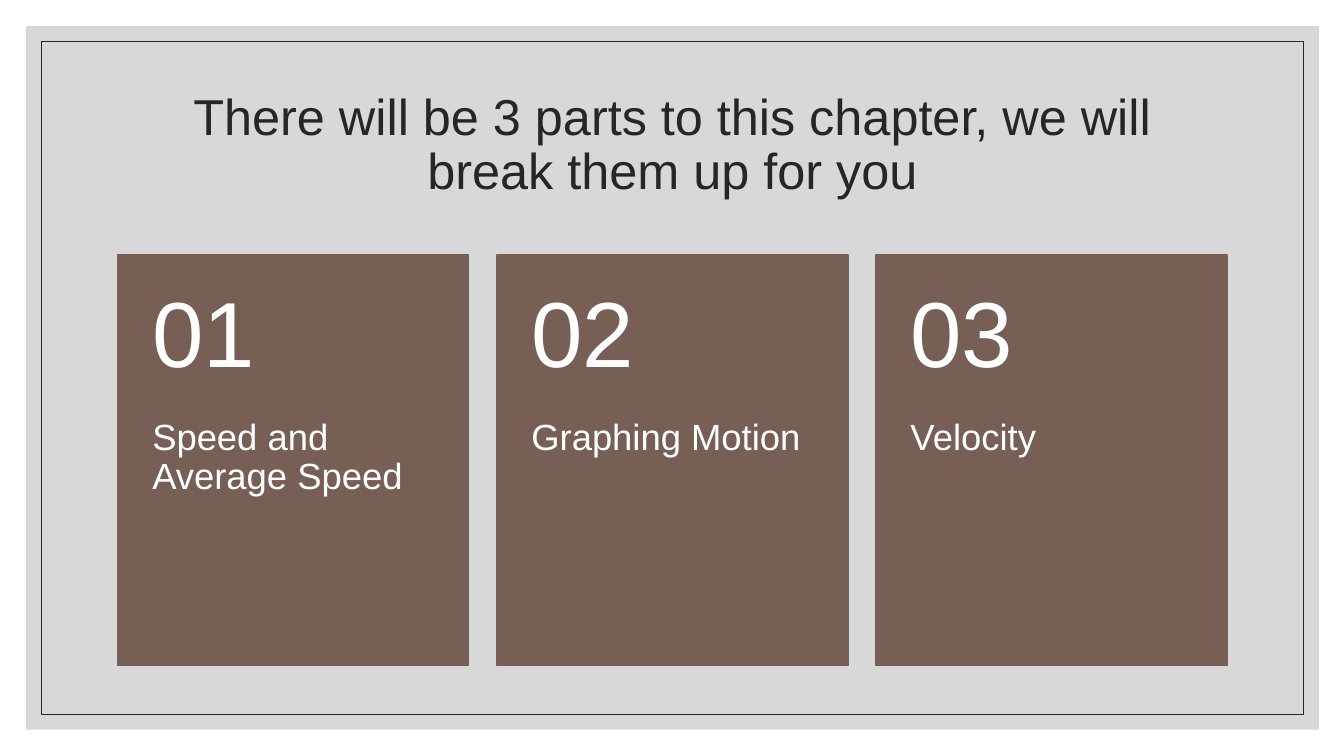
"""Build the chapter overview slide with three numbered parts."""
import pptx
import pptx.util
import pptx.dml.color
import pptx.enum.shapes
import pptx.enum.text
import pptx.oxml
import pptx.oxml.ns
from pptx.util import Inches

COLORS = {"backdrop": "BFBFBF", "ink": "262626", "card": "775F55", "card_text": "FFFFFF"}
PARTS = ["Speed and Average Speed", "Graphing Motion", "Velocity"]
CARD_LEFT, CARD_TOP, CARD_WIDTH, CARD_HEIGHT = 1.17, 2.53, 3.48, 4.07
CARD_STEP = 3.76
NUMBER_HEIGHT = 1.63


def add_panel(left, top, width, height):
    panel = slide.shapes.add_shape(
        pptx.enum.shapes.MSO_SHAPE.RECTANGLE,
        Inches(left), Inches(top), Inches(width), Inches(height))
    panel.shadow.inherit = False
    return panel


def write_text(frame, text, size, color, align, anchor):
    frame.text = text
    frame.word_wrap = True
    frame.auto_size = pptx.enum.text.MSO_AUTO_SIZE.NONE
    frame.vertical_anchor = anchor
    paragraph = frame.paragraphs[0]
    paragraph.alignment = align
    paragraph.line_spacing = 0.9
    font = paragraph.runs[0].font
    font.name = "Arial"
    font.size = pptx.util.Pt(size)
    font.color.rgb = pptx.dml.color.RGBColor.from_string(COLORS[color])


ALIGN = pptx.enum.text.PP_ALIGN
ANCHOR = pptx.enum.text.MSO_ANCHOR

presentation = pptx.Presentation()
presentation.slide_width = Inches(13.33)
presentation.slide_height = Inches(7.5)
slide = presentation.slides.add_slide(presentation.slide_layouts[5])

heading = slide.shapes.title
heading.left, heading.top = Inches(1.17), Inches(0.7)
heading.width, heading.height = Inches(11), Inches(1.5)
write_text(heading.text_frame,
           "There will be 3 parts to this chapter, we will break them up for you",
           36, "ink", ALIGN.CENTER, ANCHOR.MIDDLE)

backdrop = add_panel(0.26, 0.26, 12.82, 6.98)
backdrop.fill.solid()
backdrop.fill.fore_color.rgb = pptx.dml.color.RGBColor.from_string(COLORS["backdrop"])
backdrop.line.fill.background()
backdrop_color = backdrop.element.spPr.find(".//" + pptx.oxml.ns.qn("a:srgbClr"))
backdrop_color.append(pptx.oxml.parse_xml(
    f'<a:alpha {pptx.oxml.ns.nsdecls("a")} val="60000"/>'))

border = add_panel(0.41, 0.41, 12.52, 6.68)
border.fill.background()
border.line.color.rgb = pptx.dml.color.RGBColor.from_string(COLORS["ink"])
border.line.width = pptx.util.Pt(0.5)

for frame_part in (backdrop, border):
    heading.element.addprevious(frame_part.element)

for index, part in enumerate(PARTS):
    left = CARD_LEFT + index * CARD_STEP
    card = add_panel(left, CARD_TOP, CARD_WIDTH, CARD_HEIGHT)
    card.fill.solid()
    card.fill.fore_color.rgb = pptx.dml.color.RGBColor.from_string(COLORS["card"])
    card.line.color.rgb = pptx.dml.color.RGBColor.from_string(COLORS["card"])
    card.line.width = pptx.util.Pt(1)

    for text, size, top, height, inset_top, inset_bottom, anchor in (
        (part, 26, CARD_TOP + NUMBER_HEIGHT, CARD_HEIGHT - NUMBER_HEIGHT, 0, 0.36, ANCHOR.TOP),
        (f"{index + 1:02d}", 66, CARD_TOP, NUMBER_HEIGHT, 0.18, 0.18, ANCHOR.MIDDLE),
    ):
        label = slide.shapes.add_textbox(
            Inches(left), Inches(top), Inches(CARD_WIDTH), Inches(height)).text_frame
        label.margin_left = label.margin_right = Inches(0.34)
        label.margin_top = Inches(inset_top)
        label.margin_bottom = Inches(inset_bottom)
        write_text(label, text, size, "card_text", ALIGN.LEFT, anchor)

presentation.save("out.pptx")
